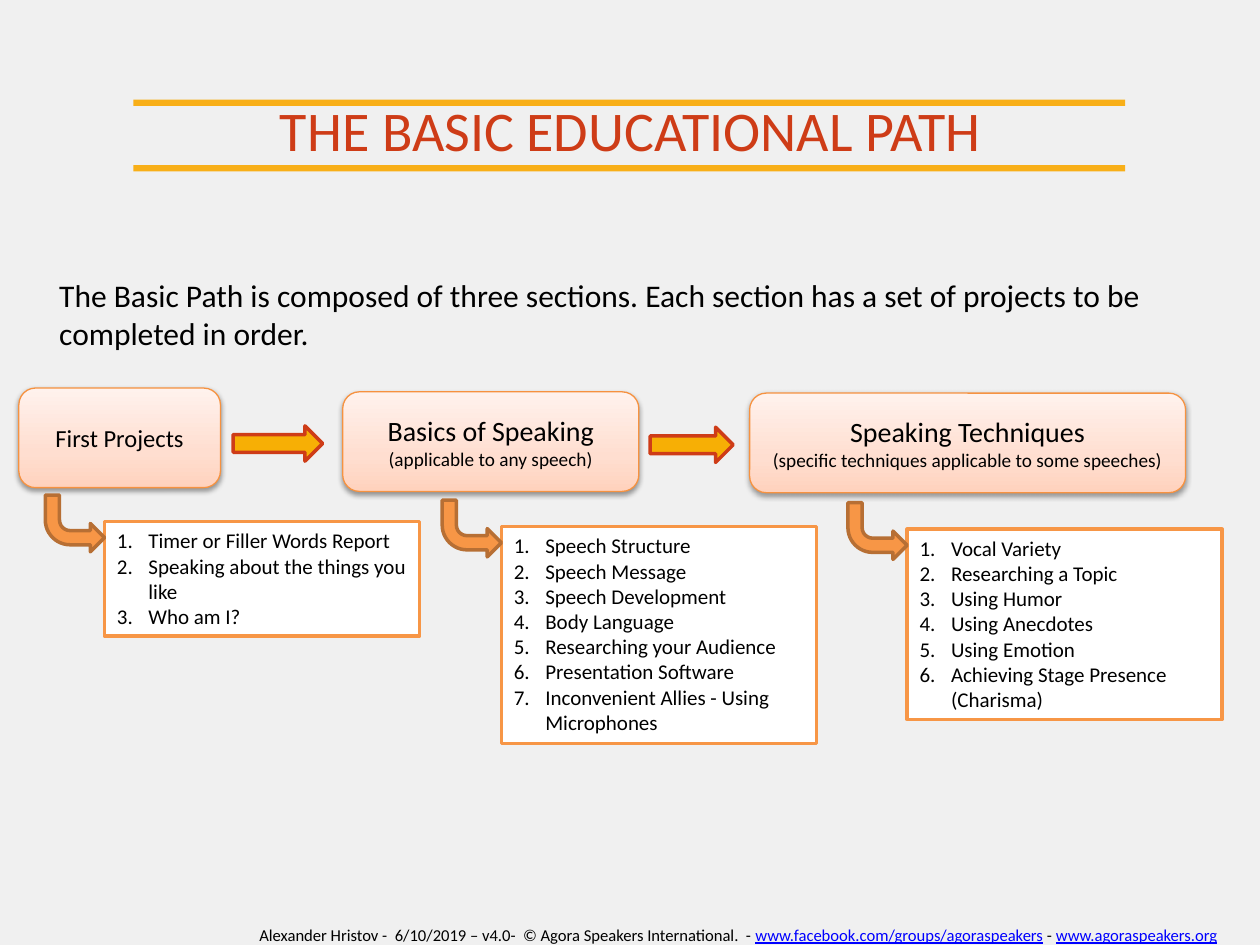
from pptx import Presentation
from pptx.dml.color import RGBColor
from pptx.enum.shapes import MSO_SHAPE
from pptx.enum.text import MSO_ANCHOR, MSO_AUTO_SIZE, PP_ALIGN
from pptx.oxml import parse_xml
from pptx.oxml.ns import nsdecls
from pptx.util import Inches, Pt

RECT, ROUNDED = MSO_SHAPE.RECTANGLE, MSO_SHAPE.ROUNDED_RECTANGLE
RIGHT_ARROW, BENT_ARROW = MSO_SHAPE.RIGHT_ARROW, MSO_SHAPE.BENT_ARROW
LEFT, CENTER = PP_ALIGN.LEFT, PP_ALIGN.CENTER
TOP, MIDDLE = MSO_ANCHOR.TOP, MSO_ANCHOR.MIDDLE
NO_FIT = MSO_AUTO_SIZE.NONE

COLORS = {
    "background": "F0F0F0", "bar": "F8AF18", "title": "CE3C17", "text": "000000",
    "link": "0000FF", "arrow": "F7AF05", "section_line": "F69240",
    "orange": "F79646", "bent_line": "B76F34", "white": "FFFFFF",
}
SECTION_GRADIENT = [(0, "FFD2BD"), (35, "FFDED0"), (100, "FFF2ED")]


def rgb(name):
    return RGBColor.from_string(COLORS[name])


def add_text(p, text, size=12, color="text", align=LEFT, underline=None):
    p.alignment = align
    r = p.add_run()
    r.text = text
    r.font.name = "Calibri"
    r.font.size = Pt(size)
    r.font.color.rgb = rgb(color)
    r.font.underline = underline


prs = Presentation()
prs.slide_width, prs.slide_height = Inches(10), Inches(7.5)
s = prs.slides.add_slide(prs.slide_layouts[1])
s.background.fill.solid()
s.background.fill.fore_color.rgb = rgb("background")

for top in (0.79, 1.31):
    sp = s.shapes.add_shape(RECT, Inches(1.06), Inches(top), Inches(7.87), Inches(0.05))
    sp.shadow.inherit = False
    sp.fill.solid()
    sp.fill.fore_color.rgb = rgb("bar")
    sp.line.fill.background()

title, body = s.shapes.title, s.placeholders[1]
for sp, box, text, size, color, align in [
    (title, (0.01, 0.71, 9.99, 0.6), "THE BASIC EDUCATIONAL PATH", 32, "title", CENTER),
    (body, (0.37, 2.14, 9.26, 0.75),
     "The Basic Path is composed of three sections. Each section has a set of "
     "projects to be completed in order.", 18, "text", LEFT),
]:
    sp.left, sp.top, sp.width, sp.height = [Inches(v) for v in box]
    tf = sp.text_frame
    tf.auto_size = NO_FIT
    tf.vertical_anchor = TOP
    add_text(tf.paragraphs[0], text, size=size, color=color, align=align)

p = body.text_frame.paragraphs[0]
p.space_before = Pt(0)
pPr = p._p.get_or_add_pPr()
pPr.set("marL", "0")
pPr.set("indent", "0")
pPr.append(parse_xml(f"<a:buNone {nsdecls('a')}/>"))

sections = [
    ((0.15, 3.08, 1.6), [("First Projects", 14)], (0.83, 4.14, 0.91),
     ["Timer or Filler Words Report", "Speaking about the things you like", "Who am I?"]),
    ((2.72, 3.11, 2.35), [("Basics of Speaking", 16), ("(applicable to any speech)", 11)],
     (3.98, 4.18, 1.72),
     ["Speech Structure", "Speech Message", "Speech Development", "Body Language",
      "Researching your Audience", "Presentation Software",
      "Inconvenient Allies - Using Microphones"]),
    ((5.95, 3.12, 3.46),
     [("Speaking Techniques", 16), ("(specific techniques applicable to some speeches)", 11)],
     (7.2, 4.2, 1.51),
     ["Vocal Variety", "Researching a Topic", "Using Humor", "Using Anecdotes",
      "Using Emotion", "Achieving Stage Presence (Charisma)"]),
]
stops = "".join(f'<a:gs pos="{pos * 1000}"><a:srgbClr val="{color}"/></a:gs>'
                for pos, color in SECTION_GRADIENT)

for (left, top, width), lines, (list_left, list_top, list_height), projects in sections:
    sp = s.shapes.add_shape(ROUNDED, Inches(left), Inches(top), Inches(width), Inches(0.79))
    spPr = sp._element.spPr
    spPr.insert(2, parse_xml(
        f'<a:gradFill {nsdecls("a")} rotWithShape="1"><a:gsLst>{stops}</a:gsLst>'
        '<a:lin ang="16200000" scaled="0"/></a:gradFill>'))
    sp.line.color.rgb = rgb("section_line")
    sp.line.width = Pt(0.75)
    sp.shadow.inherit = False
    spPr[-1].append(parse_xml(
        f'<a:outerShdw {nsdecls("a")} blurRad="{Pt(3.1)}" dist="{Pt(1.6)}" dir="5400000" '
        'rotWithShape="0"><a:srgbClr val="000000"><a:alpha val="38000"/></a:srgbClr>'
        '</a:outerShdw>'))
    tf = sp.text_frame
    tf.word_wrap = True
    tf.vertical_anchor = MIDDLE
    for i, (text, size) in enumerate(lines):
        p = tf.add_paragraph() if i else tf.paragraphs[0]
        add_text(p, text, size=size, align=CENTER)

    sp = s.shapes.add_shape(RECT, Inches(list_left), Inches(list_top), Inches(2.5),
                            Inches(list_height))
    sp.shadow.inherit = False
    sp.fill.solid()
    sp.fill.fore_color.rgb = rgb("white")
    sp.line.color.rgb = rgb("orange")
    sp.line.width = Pt(2)
    tf = sp.text_frame
    tf.word_wrap = True
    tf.vertical_anchor = TOP
    for i, project in enumerate(projects):
        p = tf.add_paragraph() if i else tf.paragraphs[0]
        pPr = p._p.get_or_add_pPr()
        pPr.set("marL", str(Inches(0.25)))
        pPr.set("indent", str(-Inches(0.25)))
        pPr.append(parse_xml(f'<a:buFont {nsdecls("a")} typeface="+mj-lt"/>'))
        pPr.append(parse_xml(f'<a:buAutoNum {nsdecls("a")} type="arabicPeriod"/>'))
        add_text(p, project)

    sp = s.shapes.add_shape(BENT_ARROW, Inches(list_left - 0.47), Inches(list_top - 0.21),
                            Inches(0.47), Inches(0.45))
    sp._element.spPr.xfrm.set("flipV", "1")
    sp.shadow.inherit = False
    sp.fill.solid()
    sp.fill.fore_color.rgb = rgb("orange")
    sp.line.color.rgb = rgb("bent_line")
    sp.line.width = Pt(2)

for left, top, width in [(1.85, 3.38, 0.71), (5.16, 3.39, 0.66)]:
    sp = s.shapes.add_shape(RIGHT_ARROW, Inches(left), Inches(top), Inches(width), Inches(0.28))
    sp.shadow.inherit = False
    sp.fill.solid()
    sp.fill.fore_color.rgb = rgb("arrow")
    sp.line.color.rgb = rgb("title")
    sp.line.width = Pt(2)

footer = s.shapes.add_textbox(Inches(1.72), Inches(7.29), Inches(8.28), Inches(0.26))
tf = footer.text_frame
tf.word_wrap = True
for text, color in [
    ("Alexander Hristov -  6/10/2019 – v4.0-  © Agora Speakers International.  - ", "text"),
    ("www.facebook.com/groups/agoraspeakers", "link"),
    (" - ", "text"),
    ("www.agoraspeakers.org", "link"),
]:
    add_text(tf.paragraphs[0], text, size=9.5, color=color, align=CENTER,
             underline=color == "link")

prs.save("out.pptx")
